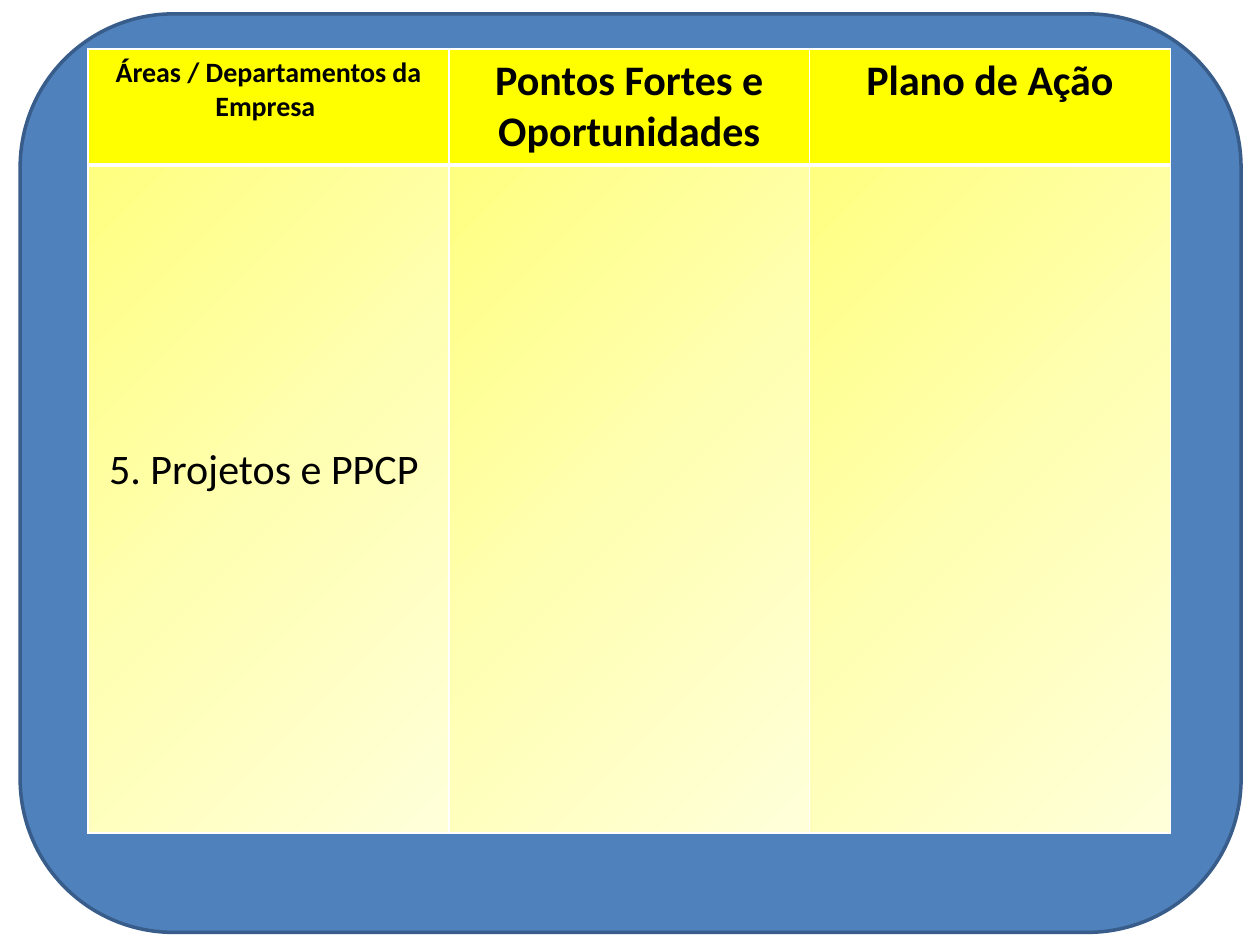
from lxml.etree import SubElement
from pptx import Presentation
from pptx.dml.color import RGBColor
from pptx.enum.shapes import MSO_SHAPE
from pptx.enum.text import PP_ALIGN
from pptx.oxml.ns import qn
from pptx.util import Inches, Pt

COLORS = {
    "panel": "4F81BD", "edge": "385D8A", "head": "FFFF00",
    "text": "000000", "rule": "FFFFFF",
}
FADE = {0: "FFFFDA", 50: "FFFFB3", 100: "FFFF80"}
HEADS = [
    ("Áreas / Departamentos da Empresa ", 16),
    ("Pontos Fortes e\nOportunidades", 24),
    ("Plano de Ação", 24),
]
AREAS = ["5. Projetos e PPCP ", "", ""]


def rgb(name):
    return RGBColor.from_string(COLORS[name])


def add_panel(slide):
    panel = slide.shapes.add_shape(
        MSO_SHAPE.ROUNDED_RECTANGLE,
        Inches(0.16), Inches(0.11), Inches(9.69), Inches(7.29))
    panel.adjustments[0] = 0.167
    panel.shadow.inherit = False
    panel.fill.solid()
    panel.fill.fore_color.rgb = rgb("panel")
    panel.line.color.rgb = rgb("edge")
    panel.line.width = Pt(2)


def add_color(parent, code):
    SubElement(parent, qn("a:srgbClr"), val=code)


def set_borders(cell, top, bottom):
    """Draw white cell edges; top and bottom are widths in points."""
    props = cell._tc.get_or_add_tcPr()
    for side, width in zip("LRTB", (1, 1, top, bottom)):
        line = SubElement(props, qn(f"a:ln{side}"), w=str(Pt(width)))
        add_color(SubElement(line, qn("a:solidFill")), COLORS["rule"])


def fill_fade(cell):
    """Fade the cell from pale at bottom right to yellow at top left."""
    grad = SubElement(cell._tc.get_or_add_tcPr(), qn("a:gradFill"))
    stops = SubElement(grad, qn("a:gsLst"))
    for pos, code in FADE.items():
        add_color(SubElement(stops, qn("a:gs"), pos=str(pos * 1000)), code)
    SubElement(grad, qn("a:lin"), ang=str(225 * 60000), scaled="0")


def set_text(cell, text, size, bold):
    cell.margin_left = cell.margin_right = Inches(0.05)
    cell.margin_top = cell.margin_bottom = Inches(0.05)
    cell.text = text
    for para in cell.text_frame.paragraphs:
        para.alignment = PP_ALIGN.CENTER
        font = para.font
        font.name = "Calibri"
        font.size = Pt(size)
        font.bold = bold
        font.color.rgb = rgb("text")


def add_grid(slide):
    table = slide.shapes.add_table(
        2, 3, Inches(0.7), Inches(0.39), Inches(8.59), Inches(6.22)).table
    table.horz_banding = False
    for row, height in zip(table.rows, (0.92, 5.3)):
        row.height = Inches(height)
    for cell, (text, size) in zip(table.rows[0].cells, HEADS):
        set_text(cell, text, size, True)
        set_borders(cell, 1, 3)
        cell.fill.solid()
        cell.fill.fore_color.rgb = rgb("head")
    for cell, text in zip(table.rows[1].cells, AREAS):
        set_text(cell, text, 24, False)
        cell.margin_top = Inches(2.22)
        set_borders(cell, 3, 1)
        fill_fade(cell)


def main():
    deck = Presentation()
    deck.slide_width = Inches(10)
    deck.slide_height = Inches(7.5)
    slide = deck.slides.add_slide(deck.slide_layouts[6])
    add_panel(slide)
    add_grid(slide)
    deck.save("out.pptx")


if __name__ == "__main__":
    main()
